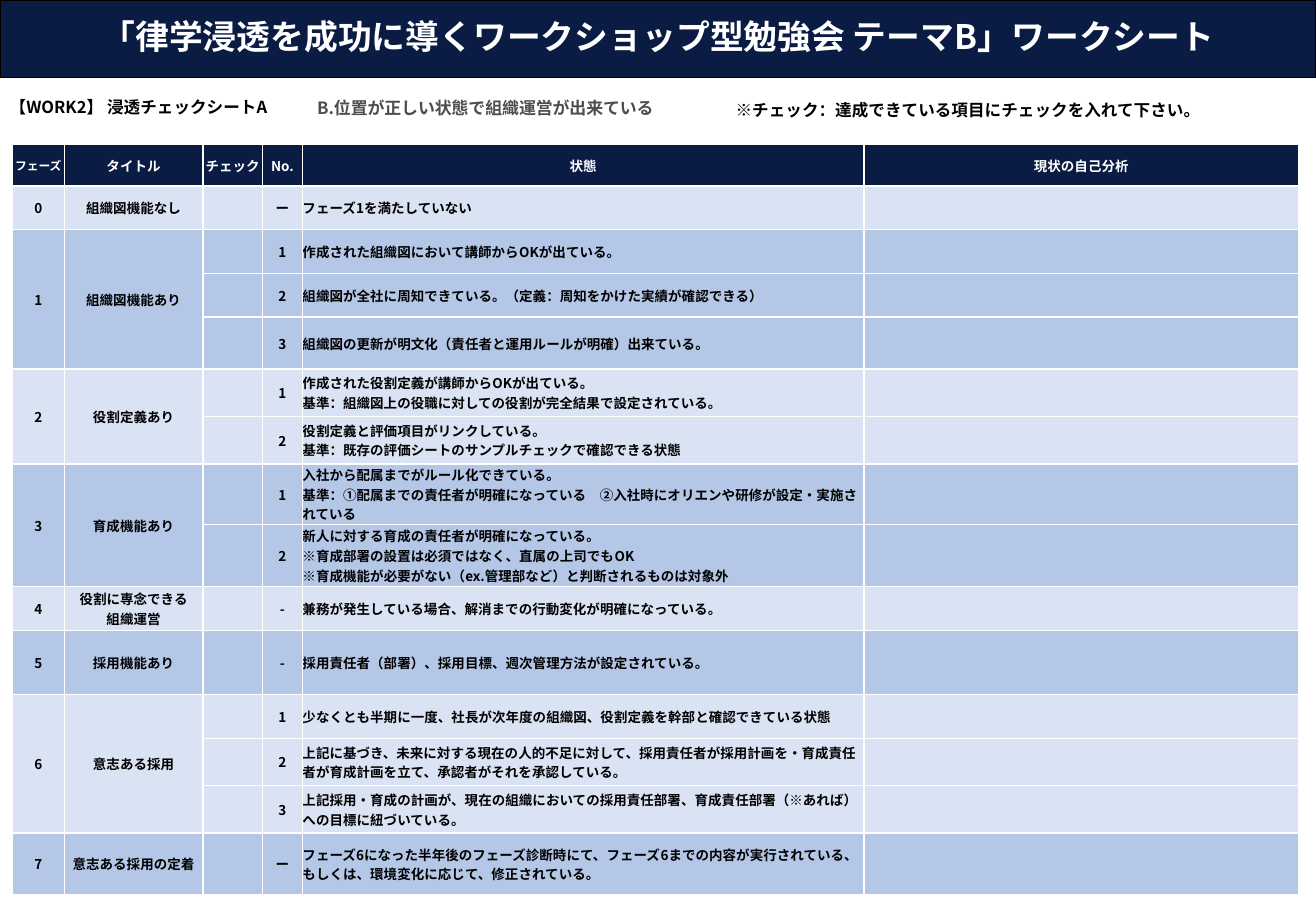
from dataclasses import dataclass

from lxml import etree
from pptx import Presentation
from pptx import util as u
from pptx.dml.color import RGBColor
from pptx.enum import shapes, text
from pptx.oxml.ns import qn

PX = 9144


@dataclass(frozen=True)
class Theme:
    font: str = "Noto Sans CJK JP"
    navy: str = "0B1C44"
    white: str = "FFFFFF"
    black: str = "000000"
    grey: str = "4D4D4D"
    bands: tuple[str, str] = ("DAE3F3", "B4C7E7")
    title: float = 20
    topic: float = 10
    note: float = 9.8
    body: float = 8
    small: float = 7


@dataclass(frozen=True)
class Label:
    words: str
    left: int
    top: int
    width: int
    height: int
    size: float
    color: str
    align: text.PP_ALIGN = text.PP_ALIGN.LEFT


@dataclass(frozen=True)
class State:
    number: str
    words: str
    height: int


@dataclass(frozen=True)
class Phase:
    title: str
    states: tuple[State, ...]


THEME = Theme()
CENTER = text.PP_ALIGN.CENTER
LABELS = (
    Label("【WORK2】 浸透チェックシートA", 0, 78, 530, 26, THEME.note, THEME.black),
    Label("B.位置が正しい状態で組織運営が出来ている", 253, 78, 327, 36, THEME.topic, THEME.grey),
    Label("※チェック：達成できている項目にチェックを入れて下さい。", 553, 80, 487, 32,
          THEME.note, THEME.black, CENTER),
)
HEADERS = ("フェーズ", "タイトル", "チェック", "No.", "状態", "現状の自己分析")
HEADER_HEIGHT = 34
COLUMNS = (43, 114, 49, 33, 462, 358)
PHASES = (
    Phase("組織図機能なし", (State("ー", "フェーズ1を満たしていない", 36),)),
    Phase("組織図機能あり", (
        State("1", "作成された組織図において講師からOKが出ている。", 36),
        State("2", "組織図が全社に周知できている。（定義：周知をかけた実績が確認できる）", 36),
        State("3", "組織図の更新が明文化（責任者と運用ルールが明確）出来ている。", 43),
    )),
    Phase("役割定義あり", (
        State("1", "作成された役割定義が講師からOKが出ている。\n"
              "基準：組織図上の役職に対しての役割が完全結果で設定されている。", 39),
        State("2", "役割定義と評価項目がリンクしている。\n"
              "基準：既存の評価シートのサンプルチェックで確認できる状態", 39),
    )),
    Phase("育成機能あり", (
        State("1", "入社から配属までがルール化できている。\n"
              "基準：①配属までの責任者が明確になっている　"
              "②入社時にオリエンや研修が設定・実施されている", 50),
        State("2", "新人に対する育成の責任者が明確になっている。\n"
              "※育成部署の設置は必須ではなく、直属の上司でもOK\n"
              "※育成機能が必要がない（ex.管理部など）と判断されるものは対象外", 51),
    )),
    Phase("役割に専念できる\n組織運営", (
        State("-", "兼務が発生している場合、解消までの行動変化が明確になっている。", 36),
    )),
    Phase("採用機能あり", (
        State("-", "採用責任者（部署）、採用目標、週次管理方法が設定されている。", 53),
    )),
    Phase("意志ある採用", (
        State("1", "少なくとも半期に一度、社長が次年度の組織図、役割定義を幹部と確認できている状態", 36),
        State("2", "上記に基づき、未来に対する現在の人的不足に対して、"
              "採用責任者が採用計画を・育成責任者が育成計画を立て、承認者がそれを承認している。", 39),
        State("3", "上記採用・育成の計画が、現在の組織においての採用責任部署、"
              "育成責任部署（※あれば）への目標に紐づいている。", 39),
    )),
    Phase("意志ある採用の定着", (
        State("ー", "フェーズ6になった半年後のフェーズ診断時にて、フェーズ6までの内容が実行されている、\n"
              "もしくは、環境変化に応じて、修正されている。", 51),
    )),
)


def px(length: int) -> u.Emu:
    return u.Emu(length * PX)


def rgb(color: str) -> RGBColor:
    return RGBColor.from_string(color)


def write(frame, words: str, *, size: float = THEME.body, color: str = THEME.black,
          align: text.PP_ALIGN = text.PP_ALIGN.LEFT, spacing: float | None = None,
          before: float | None = None) -> None:
    para = frame.paragraphs[0]
    para.alignment = align
    para.line_spacing = spacing
    if before is not None:
        para.space_before = u.Pt(before)
    for index, line in enumerate(words.split("\n") if words else ()):
        if index:
            para.add_line_break()
        span = para.add_run()
        span.text = line
        span.font.size = u.Pt(size)
        span.font.bold = True
        span.font.name = THEME.font
        span.font.color.rgb = rgb(color)
        east = etree.SubElement(span.font._element, qn("a:ea"))
        east.set("typeface", THEME.font)
    for mark in (*para._p.findall(qn("a:br")), para._p):
        props = mark.get_or_add_endParaRPr() if mark is para._p else mark.find(qn("a:rPr"))
        if props is None:
            props = etree.SubElement(mark, qn("a:rPr"))
        props.set("sz", str(int(size * 100)))


def add_banner(slide, width: u.Emu) -> None:
    box = slide.shapes.add_shape(shapes.MSO_SHAPE.RECTANGLE, 0, 0, width, px(64))
    box.shadow.inherit = False
    box.fill.solid()
    box.fill.fore_color.rgb = rgb(THEME.navy)
    box.line.color.rgb = rgb(THEME.black)
    box.line.width = u.Pt(1)
    box.text_frame.word_wrap = True
    box.text_frame.vertical_anchor = text.MSO_ANCHOR.MIDDLE
    write(box.text_frame, "「律学浸透を成功に導くワークショップ型勉強会 テーマB」ワークシート",
          size=THEME.title, color=THEME.white, align=CENTER, spacing=0.9)


def add_label(slide, label: Label) -> None:
    box = slide.shapes.add_textbox(px(label.left), px(label.top), px(label.width), px(label.height))
    frame = box.text_frame
    frame.word_wrap = True
    frame.margin_left = frame.margin_right = px(8)
    frame.margin_top = frame.margin_bottom = px(4)
    write(frame, label.words, size=label.size, color=label.color, align=label.align,
          spacing=0.9, before=10)


def style_cell(cell, fill: str) -> None:
    cell.margin_left = cell.margin_right = cell.margin_top = cell.margin_bottom = 0
    cell.vertical_anchor = text.MSO_ANCHOR.MIDDLE
    cell.fill.solid()
    cell.fill.fore_color.rgb = rgb(fill)
    props = cell._tc.get_or_add_tcPr()
    for index, side in enumerate(("lnL", "lnR", "lnT", "lnB")):
        border = etree.Element(qn(f"a:{side}"), w=str(u.Pt(1)))
        solid = etree.SubElement(border, qn("a:solidFill"))
        etree.SubElement(solid, qn("a:srgbClr"), val=THEME.white)
        props.insert(index, border)


def add_checklist(slide) -> None:
    heights = [HEADER_HEIGHT, *(state.height for phase in PHASES for state in phase.states)]
    table = slide.shapes.add_table(len(heights), len(COLUMNS), px(10), px(119),
                                   px(sum(COLUMNS)), px(sum(heights))).table
    for column, width in zip(table.columns, COLUMNS):
        column.width = px(width)
    for row, height in zip(table.rows, heights):
        row.height = px(height)
    for column, words in enumerate(HEADERS):
        cell = table.cell(0, column)
        style_cell(cell, THEME.navy)
        write(cell.text_frame, words, size=THEME.body if column else THEME.small,
              color=THEME.white, align=CENTER)
    top = 1
    for number, phase in enumerate(PHASES):
        for offset, state in enumerate(phase.states):
            lead = ("", "") if offset else (str(number), phase.title)
            for column, words in enumerate((*lead, "", state.number, state.words, "")):
                cell = table.cell(top + offset, column)
                style_cell(cell, THEME.bands[number % 2])
                write(cell.text_frame, words,
                      align=CENTER if column < 4 else text.PP_ALIGN.LEFT)
        bottom = top + len(phase.states) - 1
        if bottom > top:
            for column in (0, 1):
                table.cell(top, column).merge(table.cell(bottom, column))
        top = bottom + 1


def main() -> None:
    deck = Presentation()
    deck.slide_width, deck.slide_height = px(1083), px(750)
    page = deck.slides.add_slide(deck.slide_layouts[6])
    add_banner(page, deck.slide_width)
    for label in LABELS:
        add_label(page, label)
    add_checklist(page)
    deck.save("out.pptx")


if __name__ == "__main__":
    main()
